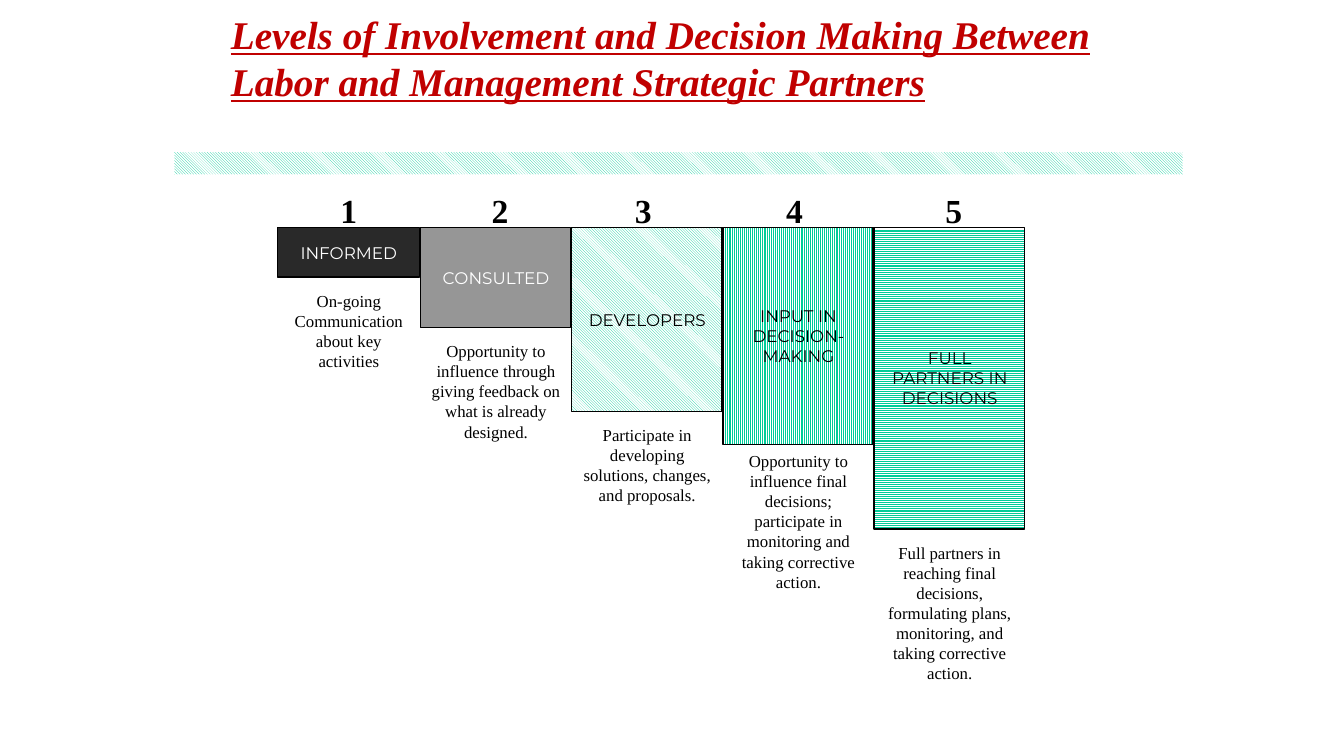
from collections import namedtuple

from pptx import Presentation
from pptx.dml.color import RGBColor
from pptx.enum import dml, shapes, text
from pptx.util import Inches, Pt

RED = RGBColor(0xC0, 0x00, 0x00)
TEAL = RGBColor(0x00, 0xCC, 0x99)
CHARCOAL = RGBColor(0x29, 0x29, 0x29)
GRAY = RGBColor(0x96, 0x96, 0x96)
BLACK = RGBColor(0x00, 0x00, 0x00)
WHITE = RGBColor(0xFF, 0xFF, 0xFF)

SERIF = "Times New Roman"
SANS = "Montserrat"
TITLE_FONT = {"name": SERIF, "size": Pt(28), "bold": True, "italic": True, "underline": True}
NUMBER_FONT = {"name": SERIF, "size": Pt(24), "bold": True}
LABEL_FONT = {"name": SANS, "size": Pt(12)}
DESCRIPTION_FONT = {"name": SERIF, "size": Pt(12)}

DIAGONAL = dml.MSO_PATTERN.LIGHT_DOWNWARD_DIAGONAL
VERTICAL = dml.MSO_PATTERN.NARROW_VERTICAL
HORIZONTAL = dml.MSO_PATTERN.NARROW_HORIZONTAL

COLUMN_WIDTH = 1.5
NUMBER_WIDTH = 1.42
NUMBER_HEIGHT = 0.51
BAR_OFFSET = 0.43

Level = namedtuple("Level", "label description fill label_color bar_height "
                            "label_height description_height inset number_shift gap")
LEVELS = [
    Level("INFORMED", "On-going Communication about key activities",
          CHARCOAL, WHITE, 0.49, 0.3, 0.91, 0.08, 0, 0.08),
    Level("CONSULTED", "Opportunity to influence through giving feedback on what is already designed.",
          GRAY, WHITE, 0.99, 0.3, 1.11, 0, 0.08, 0.08),
    Level("DEVELOPERS", "Participate in developing solutions, changes, and proposals.",
          DIAGONAL, BLACK, 1.82, 0.3, 0.91, 0, 0, 0.08),
    Level("INPUT IN DECISION-MAKING", "Opportunity to influence final decisions; participate in "
          "monitoring and taking corrective action.",
          VERTICAL, BLACK, 2.15, 0.71, 1.52, 0, 0, 0.01),
    Level("FULL PARTNERS IN DECISIONS", "Full partners in reaching final decisions, formulating plans, "
          "monitoring, and taking corrective action.",
          HORIZONTAL, BLACK, 2.99, 0.71, 1.52, 0, 0.08, 0.08),
]


def write(shape, words, font, color, alignment):
    frame = shape.text_frame
    settings = {"word_wrap": True, "auto_size": text.MSO_AUTO_SIZE.NONE,
                "vertical_anchor": text.MSO_ANCHOR.TOP}
    for name, value in settings.items():
        setattr(frame, name, value)
    paragraph = frame.paragraphs[0]
    paragraph.alignment = alignment
    run = paragraph.add_run()
    run.text = words
    for name, value in font.items():
        setattr(run.font, name, value)
    run.font.color.rgb = color


def add_text(parent, box, words, font, color=BLACK):
    shape = parent.add_textbox(*map(Inches, box))
    write(shape, words, font, color, text.PP_ALIGN.CENTER)


def add_bar(parent, box, fill, outlined=True):
    """Draw a rectangle filled with a plain colour or a teal pattern."""
    bar = parent.add_shape(shapes.MSO_SHAPE.RECTANGLE, *map(Inches, box))
    bar.shadow.inherit = False
    if isinstance(fill, RGBColor):
        bar.fill.solid()
        bar.fill.fore_color.rgb = fill
    else:
        bar.fill.patterned()
        bar.fill.pattern = fill
        bar.fill.fore_color.rgb = TEAL
        bar.fill.back_color.rgb = WHITE
    if outlined:
        bar.line.color.rgb = BLACK
        bar.line.width = Pt(1)
    else:
        bar.line.fill.background()


def add_title(slide, box):
    title = slide.shapes.title
    for name, value in zip(("left", "top", "width", "height"), box):
        setattr(title, name, Inches(value))
    write(title, "Levels of Involvement and Decision Making Between "
          "Labor and Management Strategic Partners", TITLE_FONT, RED, text.PP_ALIGN.LEFT)


def add_level(parent, left, top, number, level):
    """Stack the number, the bar with its label and the description of one level."""
    left += level.inset
    width = COLUMN_WIDTH - level.inset
    bar_top = top + BAR_OFFSET
    label_top = bar_top + (level.bar_height - level.label_height) / 2
    description_top = bar_top + level.bar_height + level.gap

    add_bar(parent, (left, bar_top, width - 0.01, level.bar_height), level.fill)
    add_text(parent, (left + level.number_shift, top, NUMBER_WIDTH, NUMBER_HEIGHT),
             str(number), NUMBER_FONT)
    add_text(parent, (left, label_top, width, level.label_height),
             level.label, LABEL_FONT, level.label_color)
    add_text(parent, (left, description_top, width, level.description_height),
             level.description, DESCRIPTION_FONT)


def add_levels(slide, left, top):
    group = slide.shapes.add_group_shape()
    for index, level in enumerate(LEVELS):
        add_level(group.shapes, left + index * COLUMN_WIDTH, top, index + 1, level)


def main():
    presentation = Presentation()
    presentation.slide_width = Inches(13.33)
    presentation.slide_height = Inches(7.5)
    slide = presentation.slides.add_slide(presentation.slide_layouts[5])
    add_title(slide, (2.19, 0.05, 9.48, 1.04))
    add_bar(slide.shapes, (1.73, 1.51, 10, 0.22), DIAGONAL, outlined=False)
    add_levels(slide, 2.67, 1.83)
    presentation.save("out.pptx")


if __name__ == "__main__":
    main()
